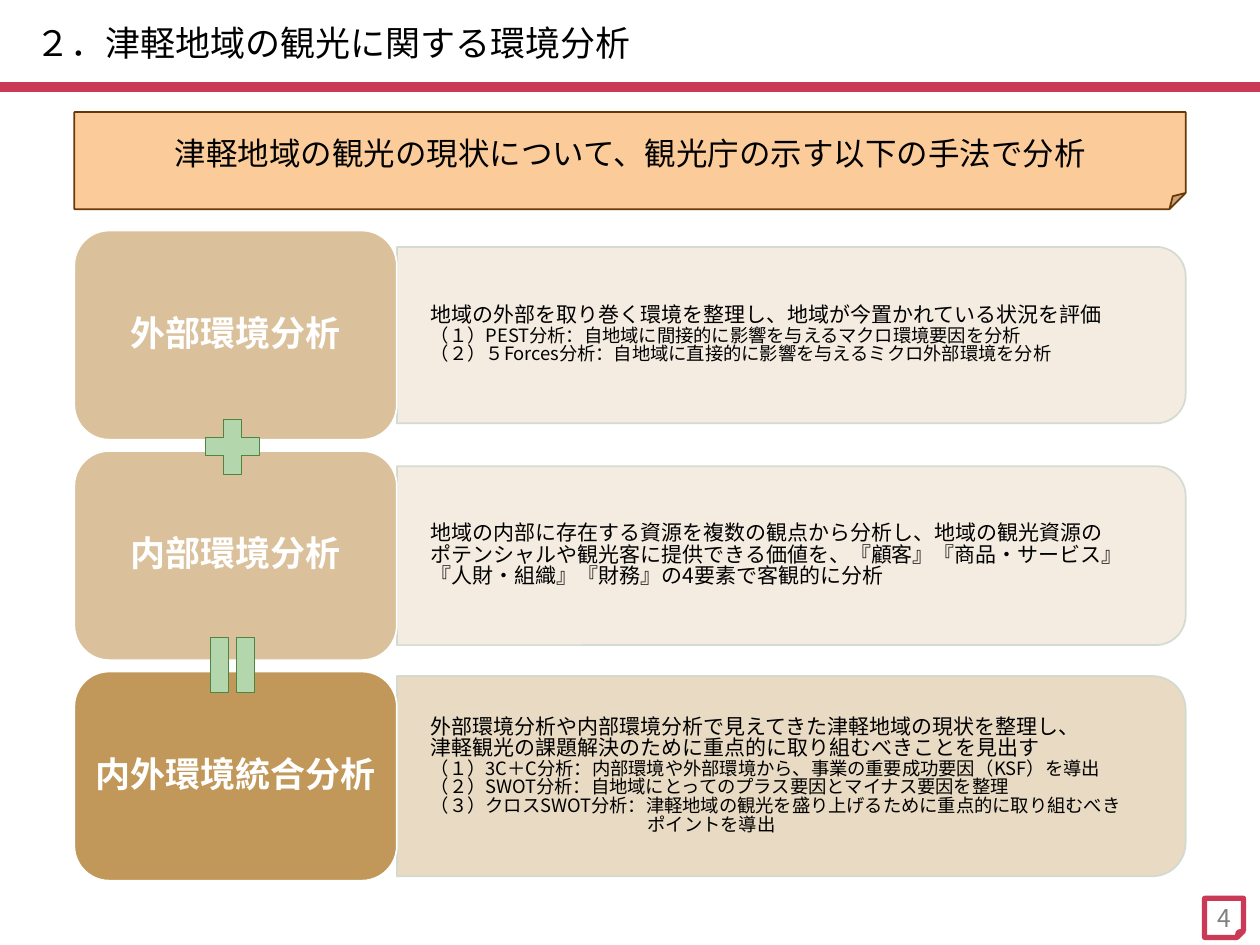
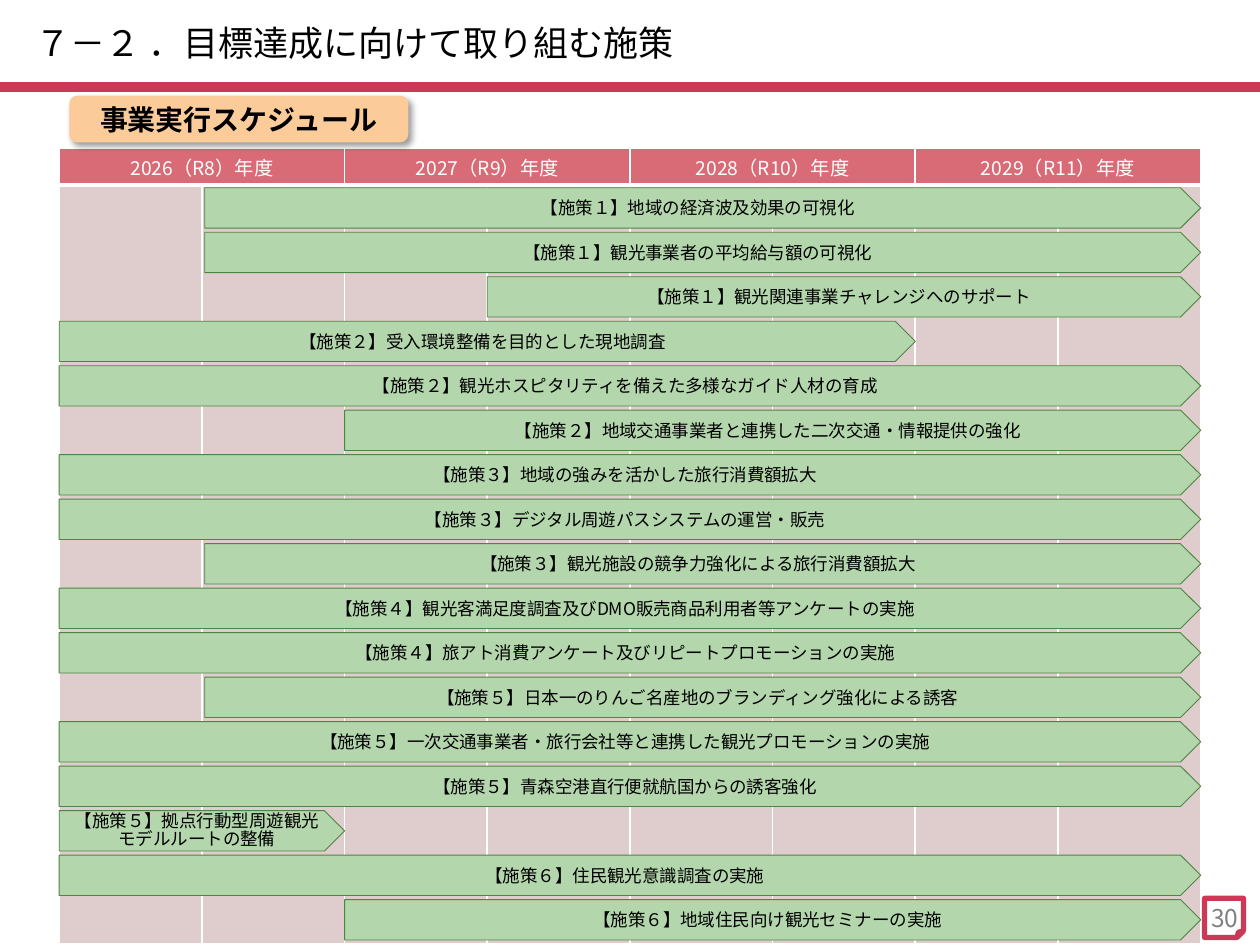
"""Build two slides on tourism analysis and the project schedule for the Tsugaru area."""
from lxml import etree
from pptx import Presentation
from pptx.dml.color import RGBColor
from pptx.enum import shapes, text
from pptx.oxml import parse_xml
from pptx.oxml.ns import nsdecls, qn
from pptx.util import Inches, Pt

FONT = "Noto Sans CJK JP"
CRIMSON = RGBColor(0xCA, 0x39, 0x56)
ROSE = RGBColor(0xD9, 0x6B, 0x77)
PALE_ROSE = RGBColor(0xDF, 0xCD, 0xCE)
PEACH = RGBColor(0xFB, 0xCC, 0x9A)
BROWN = RGBColor(0x69, 0x38, 0x04)
TAN = RGBColor(0xDA, 0xC1, 0x9B)
DARK_TAN = RGBColor(0xC1, 0x98, 0x59)
CREAM = RGBColor(0xF3, 0xEA, 0xDE)
DARK_CREAM = RGBColor(0xE6, 0xD6, 0xBD)
PANEL_EDGE = RGBColor(0xD0, 0xD9, 0xCF)
GREEN = RGBColor(0xB3, 0xD6, 0xAC)
DARK_GREEN = RGBColor(0x4E, 0x85, 0x42)
GREY = RGBColor(0x80, 0x80, 0x80)
BLACK = RGBColor(0, 0, 0)
WHITE = RGBColor(0xFF, 0xFF, 0xFF)

ANALYSIS_TITLE = "２．津軽地域の観光に関する環境分析"
ANALYSIS_BANNER = "津軽地域の観光の現状について、観光庁の示す以下の手法で分析"
ANALYSES = [
    {"name": "外部環境分析", "label_fill": TAN, "panel_fill": CREAM, "height": 1.4,
     "summary": ["地域の外部を取り巻く環境を整理し、地域が今置かれている状況を評価"],
     "methods": ["（１）PEST分析：自地域に間接的に影響を与えるマクロ環境要因を分析",
                 "（２）５Forces分析：自地域に直接的に影響を与えるミクロ外部環境を分析"],
     "continuation": []},
    {"name": "内部環境分析", "label_fill": TAN, "panel_fill": CREAM, "height": 1.42,
     "summary": ["地域の内部に存在する資源を複数の観点から分析し、地域の観光資源の",
                 "ポテンシャルや観光客に提供できる価値を、『顧客』『商品・サービス』",
                 "『人財・組織』『財務』の4要素で客観的に分析"],
     "methods": [], "continuation": []},
    {"name": "内外環境統合分析", "label_fill": DARK_TAN, "panel_fill": DARK_CREAM, "height": 1.59,
     "summary": ["外部環境分析や内部環境分析で見えてきた津軽地域の現状を整理し、",
                 "津軽観光の課題解決のために重点的に取り組むべきことを見出す"],
     "methods": ["（１）3C＋C分析：内部環境や外部環境から、事業の重要成功要因（KSF）を導出",
                 "（２）SWOT分析：自地域にとってのプラス要因とマイナス要因を整理",
                 "（３）クロスSWOT分析：津軽地域の観光を盛り上げるために重点的に取り組むべき"],
     "continuation": ["ポイントを導出"]},
]

SCHEDULE_TITLE = "７－２ ．目標達成に向けて取り組む施策"
SCHEDULE_BADGE = "事業実行スケジュール"
YEARS = ["2026（R8）年度", "2027（R9）年度", "2028（R10）年度", "2029（R11）年度"]
MEASURES = [
    ("【施策１】地域の経済波及効果の可視化", 1.02, 8),
    ("【施策１】観光事業者の平均給与額の可視化", 1.02, 8),
    ("【施策１】観光関連事業チャレンジへのサポート", 3, 8),
    ("【施策２】受入環境整備を目的とした現地調査", 0, 6),
    ("【施策２】観光ホスピタリティを備えた多様なガイド人材の育成", 0, 8),
    ("【施策２】地域交通事業者と連携した二次交通・情報提供の強化", 2, 8),
    ("【施策３】地域の強みを活かした旅行消費額拡大", 0, 8),
    ("【施策３】デジタル周遊パスシステムの運営・販売", 0, 8),
    ("【施策３】観光施設の競争力強化による旅行消費額拡大", 1.02, 8),
    ("【施策４】観光客満足度調査及びDMO販売商品利用者等アンケートの実施", 0, 8),
    ("【施策４】旅アト消費アンケート及びリピートプロモーションの実施", 0, 8),
    ("【施策５】日本一のりんご名産地のブランディング強化による誘客", 1.02, 8),
    ("【施策５】一次交通事業者・旅行会社等と連携した観光プロモーションの実施", 0, 8),
    ("【施策５】青森空港直行便就航国からの誘客強化", 0, 8),
    ("【施策５】拠点行動型周遊観光モデルルートの整備", 0, 2),
    ("【施策６】住民観光意識調査の実施", 0, 8),
    ("【施策６】地域住民向け観光セミナーの実施", 2, 8),
]

SHAPE = shapes.MSO_SHAPE
CENTER = text.PP_ALIGN.CENTER
LABEL_LEFT, LABEL_WIDTH, LABEL_HEIGHT = 0.59, 2.56, 1.66
PANEL_LEFT, PANEL_WIDTH = 3.15, 6.26
FIRST_CENTER, ANALYSIS_PITCH = 2.66, 1.75
SIGN_SIZE = 0.59
TABLE_LEFT, TABLE_TOP, TABLE_WIDTH = 0.47, 1.18, 9.06
HEADER_HEIGHT, BODY_HEIGHT = 0.29, 6.02
HALF_YEAR = TABLE_WIDTH / (2 * len(YEARS))
BAR_TOP, BAR_HEIGHT, BAR_PITCH = 1.49, 0.32, 5.65 / 16


def inches(*lengths):
    return [Inches(length) for length in lengths]


def write(frame, content, size=12, color=BLACK, bold=False, align=None, spacing=None,
          indent=0, first=True):
    """Add one paragraph to a text frame."""
    paragraph = frame.paragraphs[0] if first else frame.add_paragraph()
    if indent:
        paragraph._p.get_or_add_pPr().set("marL", str(Inches(indent)))
    paragraph.alignment = align
    paragraph.line_spacing = spacing
    run = paragraph.add_run()
    run.text = content
    run.font.name = FONT
    run.font.size = Pt(size)
    run.font.bold = bold
    run.font.color.rgb = color
    east_asian = etree.SubElement(run._r.rPr, qn("a:ea"))
    east_asian.set("typeface", FONT)


def add_box(slide, at, margins=(0.1, 0.05)):
    frame = slide.shapes.add_textbox(*inches(*at)).text_frame
    set_frame(frame, margins)
    return frame


def set_frame(frame, margins=(0.1, 0.05)):
    frame.word_wrap = True
    frame.vertical_anchor = text.MSO_ANCHOR.MIDDLE
    frame.margin_left = frame.margin_right = Inches(margins[0])
    frame.margin_top = frame.margin_bottom = Inches(margins[1])


def add_shape(slide, kind, at, fill=None, line=None, line_width=1, rotation=0):
    shape = slide.shapes.add_shape(kind, *inches(*at))
    shape.shadow.inherit = False
    shape.rotation = rotation
    if fill is None:
        shape.fill.background()
    else:
        shape.fill.solid()
        shape.fill.fore_color.rgb = fill
    if line is None:
        shape.line.fill.background()
    else:
        shape.line.color.rgb = line
        shape.line.width = Pt(line_width)
    set_frame(shape.text_frame)
    return shape


def add_slide(presentation, title, number):
    slide = presentation.slides.add_slide(presentation.slide_layouts[6])
    add_shape(slide, SHAPE.FOLDED_CORNER, (9.56, 7.13, 0.31, 0.31), line=CRIMSON, line_width=3)
    rule = slide.shapes.add_connector(shapes.MSO_CONNECTOR.STRAIGHT, *inches(0, 0.69, 10, 0.69))
    rule.line.color.rgb = CRIMSON
    rule.line.width = Pt(6)
    etree.SubElement(rule._element.spPr, qn("a:effectLst"))
    write(add_box(slide, (0.18, 0.09, 6.48, 0.53)), title, size=20, spacing=0.9)
    write(add_box(slide, (9.45, 7.08, 0.54, 0.4)), number, size=14, color=GREY, align=CENTER)
    return slide


def make_translucent(shape, percent):
    for color in shape._element.spPr.iter(qn("a:srgbClr")):
        etree.SubElement(color, qn("a:alpha")).set("val", str(percent * 1000))


def add_analysis(slide, analysis, center):
    height = analysis["height"]
    panel = add_shape(slide, SHAPE.ROUND_2_SAME_RECTANGLE,
                      (PANEL_LEFT + (PANEL_WIDTH - height) / 2, center - PANEL_WIDTH / 2,
                       height, PANEL_WIDTH),
                      analysis["panel_fill"], PANEL_EDGE, rotation=90)
    make_translucent(panel, 90)
    frame = add_box(slide, (PANEL_LEFT, center - height / 2 + 0.07, 6.19, height - 0.14),
                    (0.27, 0.14))
    lines = [(line, 12, 0) for line in analysis["summary"]]
    lines += [(line, 10.5, 0) for line in analysis["methods"]]
    lines += [(line, 10.5, 1.72) for line in analysis["continuation"]]
    for index, (line, size, indent) in enumerate(lines):
        write(frame, line, size=size, indent=indent, spacing=0.85, first=index == 0)
    label = add_shape(slide, SHAPE.ROUNDED_RECTANGLE,
                      (LABEL_LEFT, center - LABEL_HEIGHT / 2, LABEL_WIDTH, LABEL_HEIGHT),
                      analysis["label_fill"], WHITE)
    set_frame(label.text_frame, (0.08, 0.04))
    write(label.text_frame, analysis["name"], size=20, color=WHITE, bold=True,
          align=CENTER, spacing=0.9)


def build_analysis(presentation):
    slide = add_slide(presentation, ANALYSIS_TITLE, "4")
    for index, analysis in enumerate(ANALYSES):
        add_analysis(slide, analysis, FIRST_CENTER + index * ANALYSIS_PITCH)
    banner = add_shape(slide, SHAPE.FOLDED_CORNER, (0.59, 0.89, 8.82, 0.77), PEACH, BROWN)
    write(banner.text_frame, ANALYSIS_BANNER, size=18, align=CENTER)
    signs = [(SHAPE.MATH_PLUS, 3.25, 0), (SHAPE.MATH_EQUAL, 4.98, 90)]
    for kind, top, rotation in signs:
        add_shape(slide, kind, (1.55, top, SIGN_SIZE, SIGN_SIZE), GREEN, DARK_GREEN, 0.5, rotation)


def style_cell(cell, fill, bottom_width):
    properties = cell._tc.get_or_add_tcPr()
    for side, width in (("L", 1), ("R", 1), ("T", 1), ("B", bottom_width)):
        properties.append(parse_xml(
            f'<a:ln{side} {nsdecls("a")} w="{Pt(width)}"><a:solidFill>'
            f'<a:srgbClr val="{WHITE}"/></a:solidFill></a:ln{side}>'))
    cell.fill.solid()
    cell.fill.fore_color.rgb = fill


def add_calendar(slide):
    columns = 2 * len(YEARS)
    table = slide.shapes.add_table(2, columns, *inches(
        TABLE_LEFT, TABLE_TOP, TABLE_WIDTH, HEADER_HEIGHT + BODY_HEIGHT)).table
    for column in table.columns:
        column.width = Inches(HALF_YEAR)
    table.rows[0].height, table.rows[1].height = inches(HEADER_HEIGHT, BODY_HEIGHT)
    for column in range(columns):
        style_cell(table.cell(0, column), ROSE, 3)
        style_cell(table.cell(1, column), PALE_ROSE, 1)
        table.cell(0, column).margin_top = table.cell(0, column).margin_bottom = Inches(0.02)
    for index, year in enumerate(YEARS):
        cell = table.cell(0, 2 * index)
        cell.merge(table.cell(0, 2 * index + 1))
        cell.vertical_anchor = text.MSO_ANCHOR.MIDDLE
        write(cell.text_frame, year, size=11, color=WHITE, align=CENTER)


def build_schedule(presentation):
    slide = add_slide(presentation, SCHEDULE_TITLE, "30")
    add_calendar(slide)
    for row, (measure, start, end) in enumerate(MEASURES):
        bar = add_shape(slide, SHAPE.PENTAGON,
                        (TABLE_LEFT + start * HALF_YEAR, BAR_TOP + row * BAR_PITCH,
                         (end - start) * HALF_YEAR, BAR_HEIGHT),
                        GREEN, DARK_GREEN, 0.5)
        write(bar.text_frame, measure, size=10, align=CENTER,
              spacing=0.85 if end - start == 2 else None)
    badge = add_shape(slide, SHAPE.ROUNDED_RECTANGLE, (0.55, 0.76, 2.69, 0.37), PEACH)
    effects = badge._element.spPr.find(qn("a:effectLst"))
    effects.append(parse_xml(
        f'<a:outerShdw {nsdecls("a")} blurRad="{Pt(4)}" dist="{Pt(3)}" dir="2700000" '
        'algn="tl" rotWithShape="0"><a:srgbClr val="000000"><a:alpha val="40000"/>'
        '</a:srgbClr></a:outerShdw>'))
    write(badge.text_frame, SCHEDULE_BADGE, size=16, bold=True, align=CENTER)


def main():
    presentation = Presentation()
    presentation.slide_width, presentation.slide_height = inches(10, 7.5)
    build_analysis(presentation)
    build_schedule(presentation)
    presentation.save("out.pptx")


if __name__ == "__main__":
    main()
